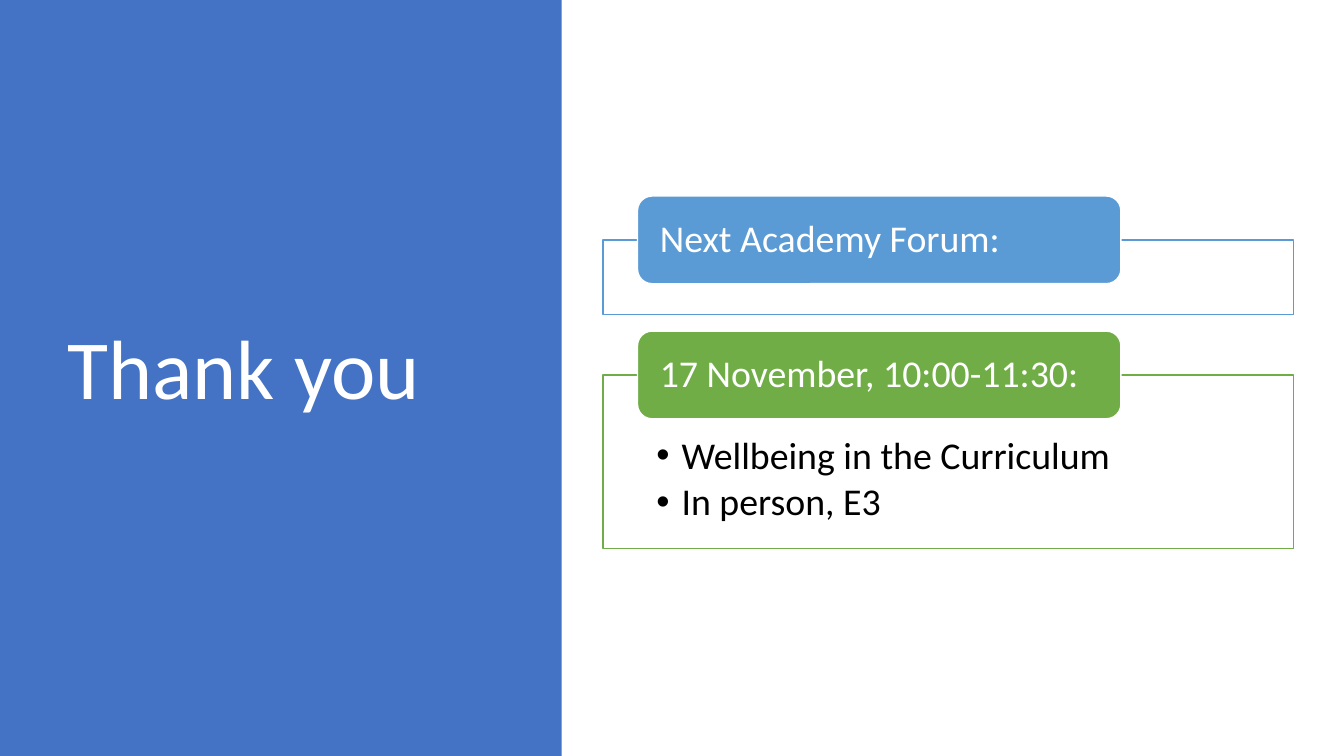
from pptx import Presentation
from pptx.dml.color import RGBColor
from pptx.enum.shapes import MSO_SHAPE
from pptx.enum.text import MSO_ANCHOR, PP_ALIGN
from pptx.oxml.ns import qn
from pptx.util import Inches, Pt
from lxml.etree import SubElement


def add_block(kind, left, top, width, height, fill, line=None):
    block = page.shapes.add_shape(
        kind, Inches(left), Inches(top), Inches(width), Inches(height))
    block.shadow.inherit = False
    block.fill.solid()
    block.fill.fore_color.rgb = RGBColor.from_string(fill)
    if line:
        block.line.color.rgb = RGBColor.from_string(line)
        block.line.width = Pt(1)
    else:
        block.line.fill.background()
    return block


def write(shape, lines, size, color, anchor, margins, gap=0):
    frame = shape.text_frame
    frame.word_wrap = True
    frame.vertical_anchor = anchor
    (frame.margin_left, frame.margin_top,
     frame.margin_right, frame.margin_bottom) = map(Inches, margins)
    frame.text = "\n".join(lines)
    for para in frame.paragraphs:
        para.alignment = PP_ALIGN.LEFT
        para.line_spacing = 0.9
        para.space_after = Pt(gap)
        for span in para.runs:
            span.font.name = "Calibri"
            span.font.size = Pt(size)
            span.font.color.rgb = RGBColor.from_string(color)


deck = Presentation()
deck.slide_width, deck.slide_height = Inches(13.33), Inches(7.5)
page = deck.slides.add_slide(deck.slide_layouts[5])

# Title on the blue panel
title = page.shapes.title
title.left, title.top = Inches(0.57), Inches(0.68)
title.width, title.height = Inches(4.16), Inches(6.02)
write(title, ["Thank you"], 60, "FFFFFF", MSO_ANCHOR.MIDDLE, (0.1, 0.05, 0.1, 0.05))
panel = add_block(MSO_SHAPE.RECTANGLE, 0, 0, 5.57, 7.5, "4472C4")
title.element.addprevious(panel.element)

# Framed sections, each with a label centred on the frame's top edge
frame_left, frame_width = 5.98, 6.85
label_height = 0.87
sections = [
    ("Next Academy Forum:", [], 2.38, 0.74, "5B9BD5"),
    ("17 November, 10:00-11:30:\u00a0".strip(),
     ["Wellbeing in the Curriculum", "In person, E3"], 3.72, 1.72, "70AD47"),
]
for heading, details, top, height, color in sections:
    box = add_block(MSO_SHAPE.RECTANGLE, frame_left, top, frame_width, height,
                    "FFFFFF", color)
    if details:
        write(box, details, 27, "000000", MSO_ANCHOR.TOP,
              (0.53, 0.61, 0.53, 0.21), gap=4)
        for para in box.text_frame.paragraphs:
            properties = para._p.get_or_add_pPr()
            properties.set("marL", str(Inches(0.25)))
            properties.set("indent", str(-Inches(0.25)))
            SubElement(properties, qn("a:buFont")).set("typeface", "Arial")
            SubElement(properties, qn("a:buChar")).set("char", "•")

    label = add_block(MSO_SHAPE.ROUNDED_RECTANGLE, frame_left + 0.05 * frame_width,
                      top - label_height / 2, 0.7 * frame_width, label_height,
                      color, "FFFFFF")
    write(label, [heading], 27, "FFFFFF", MSO_ANCHOR.MIDDLE, (0.18, 0, 0.18, 0))

deck.save("out.pptx")
